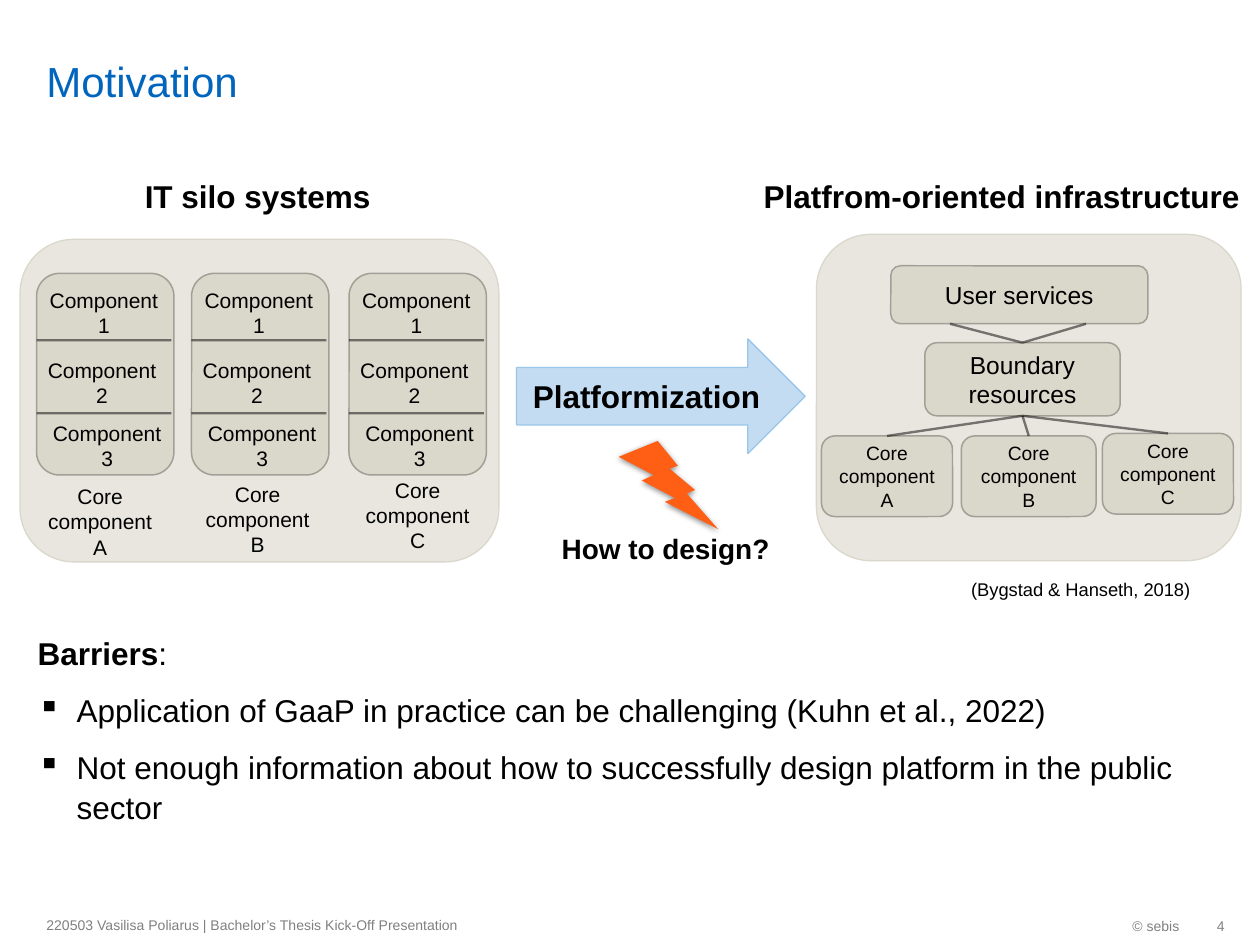
from lxml import etree
from pptx import Presentation
from pptx.dml.color import RGBColor
from pptx.enum.shapes import MSO_CONNECTOR, MSO_SHAPE
from pptx.enum.text import MSO_ANCHOR, PP_ALIGN
from pptx.oxml.ns import qn
from pptx.util import Inches, Pt

LEFT, MID, RIGHT = PP_ALIGN.LEFT, PP_ALIGN.CENTER, PP_ALIGN.RIGHT
TOP, CENTER, LOW = MSO_ANCHOR.TOP, MSO_ANCHOR.MIDDLE, MSO_ANCHOR.BOTTOM
ROUND, ARROW = MSO_SHAPE.ROUNDED_RECTANGLE, MSO_SHAPE.RIGHT_ARROW
BOLT, STRAIGHT = MSO_SHAPE.LIGHTNING_BOLT, MSO_CONNECTOR.STRAIGHT
HEX = {
    "ink": "000000", "title": "0065BD", "foot": "808080",
    "panel": "E8E6DF", "box": "DAD7CB", "edge": "A19F96",
    "arrow": "C4DCF2", "rim": "98C6EA", "bolt": "FF5E15",
}
COLOR = {name: RGBColor.from_string(code) for name, code in HEX.items()}

prs = Presentation()
prs.slide_width, prs.slide_height = Inches(10), Inches(7.5)
slide = prs.slides.add_slide(prs.slide_layouts[6])
shapes = slide.shapes


def add_text(at, lines, size, color="ink", bold=False, align=MID, anchor=TOP,
             wrap=True, kind=None, fill=None, edge=None, width=0.75):
    """Add a text box, or a filled shape when a kind is given."""
    place = [Inches(v) for v in at]
    if kind is None:
        shape = shapes.add_textbox(*place)
    else:
        shape = shapes.add_shape(kind, *place)
        shape.shadow.inherit = False
        shape.fill.solid()
        shape.fill.fore_color.rgb = COLOR[fill]
        if edge:
            shape.line.color.rgb = COLOR[edge]
            shape.line.width = Pt(width)
        else:
            shape.line.fill.background()
    frame = shape.text_frame
    frame.word_wrap = wrap
    frame.vertical_anchor = anchor
    for i, line in enumerate(lines):
        para = frame.add_paragraph() if i else frame.paragraphs[0]
        para.text = line
        para.alignment = align
        font = para.font
        font.name, font.size, font.bold = "Arial", Pt(size), bold
        font.color.rgb = COLOR[color]
    return shape


def add_line(x1, y1, x2, y2):
    """Add a half-transparent black line."""
    line = shapes.add_connector(STRAIGHT, *(Inches(v) for v in (x1, y1, x2, y2)))
    line.line.color.rgb = COLOR["ink"]
    line.line.width = Pt(1.35)
    props = line._element.spPr
    tint = props.find(".//" + qn("a:srgbClr"))
    etree.SubElement(tint, qn("a:alpha"), val="50000")
    etree.SubElement(props, qn("a:effectLst"))
    return line


# Title and footer
title = add_text((0.27, 0.05, 8.24, 0.79), ["Motivation"], 24, "title",
                 align=LEFT, anchor=LOW)
title.text_frame.margin_top = title.text_frame.margin_bottom = 0
add_text((0.27, 7.18, 4.73, 0.32),
         ["220503 Vasilisa Poliarus | Bachelor’s Thesis Kick-Off Presentation"],
         8, "foot", align=LEFT, anchor=CENTER)
add_text((7.7, 7.19, 1.76, 0.32), ["© sebis"], 8, "foot", align=RIGHT,
         anchor=CENTER, wrap=False)
number = add_text((9.45, 7.19, 0.27, 0.32), ["4"], 8, "foot", align=RIGHT,
                  anchor=CENTER, wrap=False)
number.text_frame.margin_right = 0

# Silo systems
add_text((0.16, 1.9, 3.8, 2.56), [], 12, kind=ROUND, fill="panel", edge="box")
add_text((1.04, 1.36, 2.01, 0.4), ["IT silo systems"], 18, bold=True, wrap=False)
silos = [("A", 0.29, 0.27, 3.79), ("B", 1.52, 1.52, 3.77), ("C", 2.77, 2.79, 3.74)]
for name, x, label_x, label_y in silos:
    add_text((x, 2.17, 1.09, 1.6), [], 12, kind=ROUND, fill="box", edge="edge",
             width=0.85)
    for y in (2.7, 3.28):
        add_line(x, y, x + 1.07, y)
    parts = [(0, 2.23, 1.07), (-0.04, 2.79, 1.12), (0, 3.29, 1.12)]
    for i, (shift, y, w) in enumerate(parts, 1):
        add_text((x + shift, y, w, 0.5), ["Component", str(i)], 12)
    add_text((label_x, label_y, 1.05, 0.71), ["Core component", name], 12)

# Platform
add_text((6.48, 1.86, 3.37, 2.59), [], 12, kind=ROUND, fill="panel", edge="box")
add_text((5.94, 1.36, 4.02, 0.4), ["Platfrom-oriented infrastructure"], 18,
         bold=True, wrap=False)
layers = [
    ("User services", 14, (7.07, 2.11, 2.04, 0.46)),
    ("Boundary resources", 14, (7.34, 2.72, 1.55, 0.58)),
    ("Core component A", 11, (6.52, 3.46, 1.04, 0.64)),
    ("Core component B", 11, (7.63, 3.46, 1.07, 0.64)),
    ("Core component C", 11, (8.75, 3.44, 1.04, 0.64)),
]
user, hub, *cores = [
    add_text(at, [name], size, anchor=CENTER, kind=ROUND, fill="box",
             edge="edge", width=0.85)
    for name, size, at in layers
]
for x in (7.54, 8.62):
    add_line(x, 2.57, 8.12, 2.72).end_connect(hub, 0)
for core in cores:
    link = add_line(8.12, 3.3, 8.12, 3.46)
    link.begin_connect(hub, 2)
    link.end_connect(core, 0)
add_text((7.61, 4.54, 1.97, 0.28), ["(Bygstad & Hanseth, 2018)"], 10.5,
         align=LEFT, wrap=False)

# Way from silos to platform
add_text((4.1, 2.69, 2.29, 0.91), ["Platformization"], 18, bold=True,
         anchor=CENTER, kind=ARROW, fill="arrow", edge="rim")
bolt = add_text((4.91, 3.5, 0.79, 0.7), [], 12, kind=BOLT, fill="bolt")
glow = etree.SubElement(
    bolt._element.spPr.find(qn("a:effectLst")), qn("a:outerShdw"),
    blurRad=str(Pt(3.5)), dist=str(Pt(1.1)), dir="5400000", rotWithShape="0")
shade = etree.SubElement(glow, qn("a:srgbClr"), val=HEX["ink"])
etree.SubElement(shade, qn("a:alpha"), val="45000")
add_text((4.36, 4.17, 1.87, 0.37), ["How to design?"], 16, bold=True,
         align=LEFT, wrap=False)

# Barriers
body = add_text((0.2, 4.97, 9.45, 1.9), [
    "Barriers",
    "Application of GaaP in practice can be challenging (Kuhn et al., 2022)",
    "Not enough information about how to successfully design platform in the "
    "public sector",
], 18, align=LEFT)
head, *points = body.text_frame.paragraphs
head.runs[0].font.bold = True
head.add_run().text = ":"
head.line_spacing, head.space_after = 1.05, Pt(10)
for para in points:
    para.line_spacing = 1.05
    props = para._p.get_or_add_pPr()
    props.set("marL", str(Inches(0.31)))
    props.set("indent", str(Inches(-0.31)))
    mark = etree.Element(qn("a:buChar"), char="▪")
    props.find(qn("a:defRPr")).addprevious(mark)
points[0].space_after = Pt(6)
points[1].space_before = Pt(3.6)

prs.save("out.pptx")
